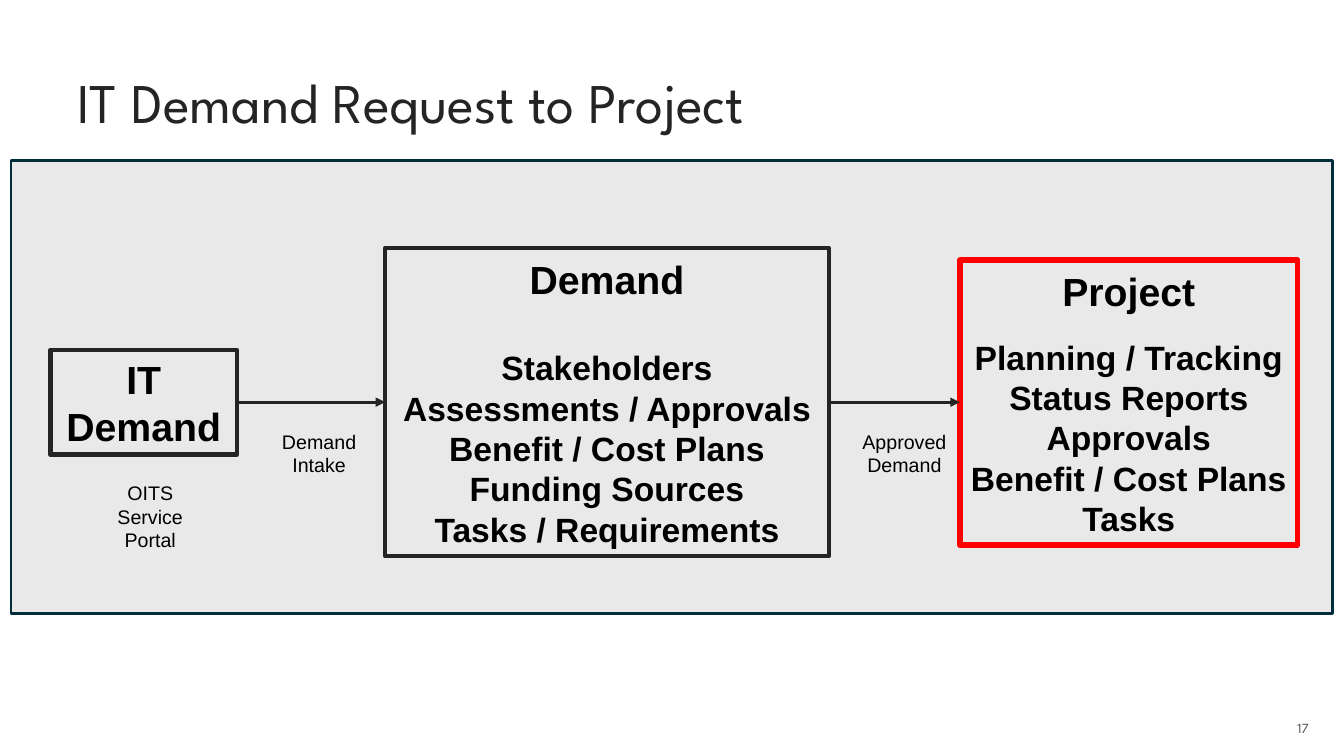
from lxml import etree
from pptx import Presentation
from pptx import util as u
from pptx.dml.color import RGBColor
from pptx.enum import shapes, text
from pptx.oxml.ns import qn

INK, BLACK = "242423", "000000"
MID = 3.99


def color(code):
    return RGBColor.from_string(code)


class Page:
    body, head = "Arial", "League Spartan"

    def __init__(self, deck):
        self.slide = deck.slides.add_slide(deck.slide_layouts[5])

    def place(self, item, area):
        item.left, item.top, item.width, item.height = map(u.Inches, area)

    def letter(self, frame, lines, size, face, ink, align, bold=False):
        frame.word_wrap = True
        frame.vertical_anchor = text.MSO_ANCHOR.MIDDLE
        for i, line in enumerate(lines):
            para = frame.paragraphs[0] if i == 0 else frame.add_paragraph()
            para.text = line
            para.alignment = align
            font = para.font
            font.size, font.name, font.bold = u.Pt(size), face, bold
            font.color.rgb = color(ink)

    def title(self, words, area):
        item = self.slide.shapes.title
        self.place(item, area)
        self.letter(item.text_frame, [words], 40, self.head, INK, text.PP_ALIGN.LEFT)
        item.text_frame.paragraphs[0].line_spacing = 0.9

    def number(self, words, area):
        item = self.slide.shapes.add_textbox(*map(u.Inches, area))
        self.letter(item.text_frame, [words], 10, self.head, "535353", text.PP_ALIGN.RIGHT)

    def rect(self, area, line, width, fill=None):
        item = self.slide.shapes.add_shape(
            shapes.MSO_SHAPE.RECTANGLE, *map(u.Inches, area))
        item.shadow.inherit = False
        if fill:
            item.fill.solid()
            item.fill.fore_color.rgb = color(fill)
        else:
            item.fill.background()
        item.line.color.rgb = color(line)
        item.line.width = u.Pt(width)
        return item

    def stage(self, area, name, items=(), gap=0, line=INK, width=3):
        frame = self.rect(area, line, width).text_frame
        frame.margin_left = frame.margin_right = u.Inches(0.08)
        self.letter(frame, [name, *items], 28, self.body, BLACK, text.PP_ALIGN.CENTER, True)
        for para in frame.paragraphs[1:]:
            para.font.size = u.Pt(24)
        if items:
            frame.paragraphs[1].space_before = u.Pt(gap)

    def label(self, area, *lines):
        item = self.slide.shapes.add_textbox(*map(u.Inches, area))
        self.letter(item.text_frame, lines, 14, self.body, BLACK, text.PP_ALIGN.CENTER)

    def arrow(self, start, end):
        link = self.slide.shapes.add_connector(
            shapes.MSO_CONNECTOR.STRAIGHT, *map(u.Inches, (start, MID, end, MID)))
        link.line.color.rgb = color(INK)
        link.line.width = u.Pt(2.25)
        props = link.element.spPr
        etree.SubElement(props.find(qn("a:ln")), qn("a:tailEnd"), type="triangle")
        etree.SubElement(props, qn("a:effectLst"))


def main():
    deck = Presentation()
    deck.slide_width, deck.slide_height = u.Inches(13.33), u.Inches(7.5)
    page = Page(deck)
    page.title("IT Demand Request to Project", (0.67, 0.37, 12, 1.36))
    page.rect((0.11, 1.59, 13.11, 4.5), "002E3B", 2, "E9E9E9")
    page.number("17", (12.42, 7.02, 0.66, 0.4))

    page.stage((0.5, 3.47, 1.85, 1.04), "IT Demand")
    page.stage((3.82, 2.46, 4.4, 3.06), "Demand",
               ["Stakeholders", "Assessments / Approvals", "Benefit / Cost Plans",
                "Funding Sources", "Tasks / Requirements"], gap=32)
    page.stage((9.52, 2.58, 3.35, 2.83), "Project",
               ["Planning / Tracking", "Status Reports", "Approvals",
                "Benefit / Cost Plans", "Tasks"], gap=16, line="FF0000", width=4)

    page.arrow(2.35, 3.82)
    page.arrow(8.22, 9.52)

    page.label((2.64, 4.21, 1.05, 0.57), "Demand", "Intake")
    page.label((0.83, 4.72, 1.32, 0.81), "OITS Service Portal")
    page.label((8.43, 4.21, 1.08, 0.57), "Approved", "Demand")
    deck.save("out.pptx")


if __name__ == "__main__":
    main()
